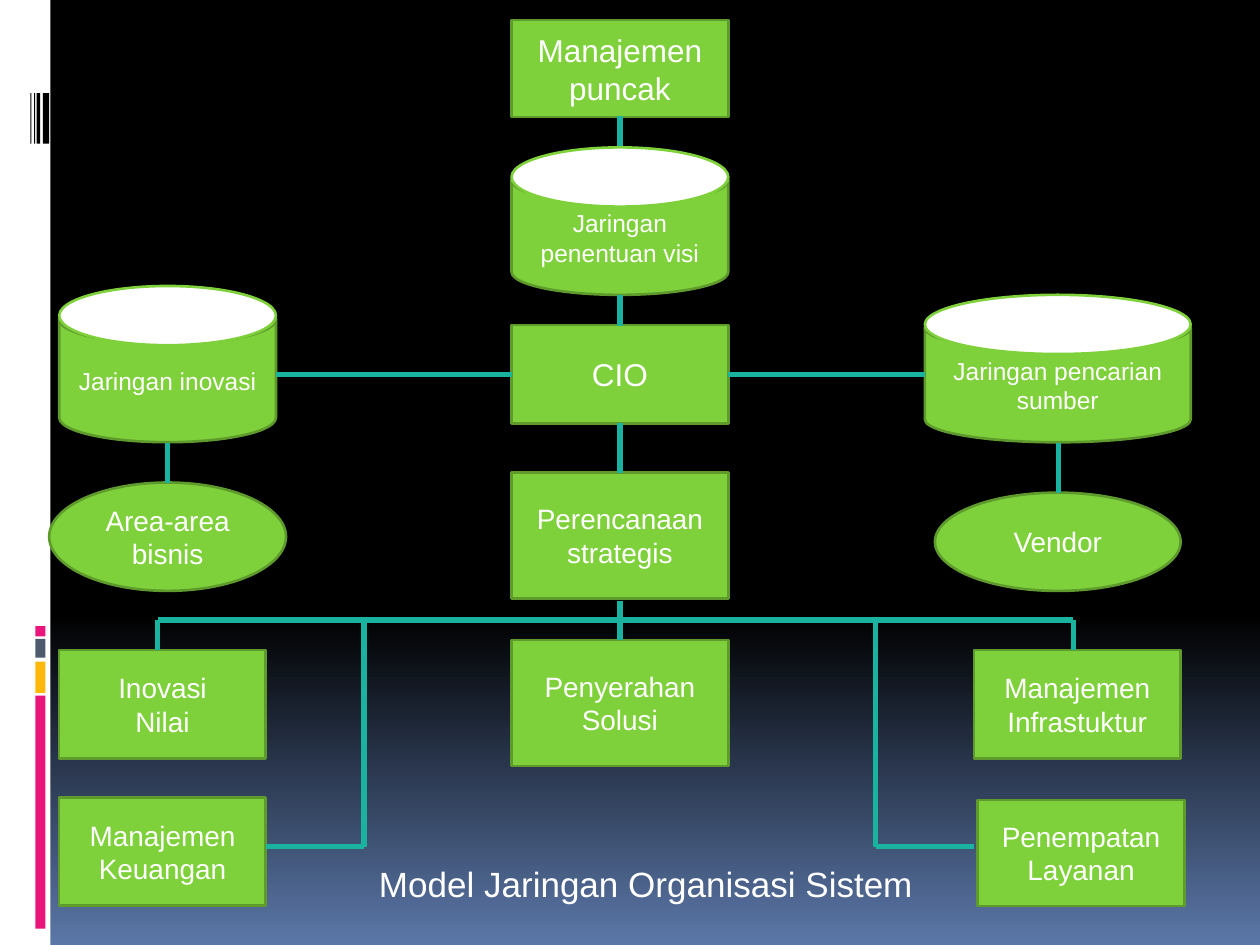
import pptx
import pptx.util
import pptx.dml.color
import pptx.enum.shapes
import pptx.enum.text
import pptx.oxml.ns
import lxml.etree

Inches, Pt = pptx.util.Inches, pptx.util.Pt
KIND = pptx.enum.shapes.MSO_SHAPE
RECT, OVAL, DISK = KIND.RECTANGLE, KIND.OVAL, KIND.FLOWCHART_MAGNETIC_DISK

THEME = {
    "font": "Arial", "text": "FFFFFF", "white": "FFFFFF", "black": "000000",
    "node": "7FD13B", "edge": "5E9B2C", "link": "1AB39F", "sky": "5B77A8",
    "pink": "EA157A", "amber": "FEB80A", "slate": "4E5B6F",
    "top": 18, "network": 14, "unit": 16, "title": 20,
    "edge_w": 1.5, "link_w": 3,
}

# Side decoration: left, top, width, height, colour
STRIPS = [
    (0, 0, 0.4, 7.5, "white"),
    (0.28, 5.52, 0.08, 1.85, "pink"),
    (0.28, 5.25, 0.08, 0.25, "amber"),
    (0.28, 5.07, 0.08, 0.15, "slate"),
    (0.28, 4.97, 0.08, 0.08, "pink"),
]
BARCODE = [(0.34, 0.05), (0.29, 0.03), (0.27, 0.01), (0.24, 0.01)]
BARCODE_TOP, BARCODE_H = 0.74, 0.4

# Chart columns and levels
MID, MID_W = 4.06, 1.72
LEFT, UNIT_W = 0.47, 1.64
AXIS = MID + MID_W / 2
CIO_Y, BUS_Y, LOW_Y = 2.97, 4.92, 6.72

# Nodes: kind, left, top, width, height, type size, paragraphs
NODES = [
    (RECT, MID, 0.16, MID_W, 0.77, "top", ["Manajemen puncak"]),
    (DISK, MID, 1.25, MID_W, 1.09, "network", ["Jaringan penentuan visi"]),
    (RECT, MID, 2.58, MID_W, 0.78, "top", ["CIO"]),
    (DISK, LEFT, 2.34, MID_W, 1.17, "network", ["Jaringan inovasi"]),
    (DISK, 7.34, 2.42, 2.11, 1.09, "network", ["Jaringan pencarian sumber"]),
    (RECT, MID, 3.75, MID_W, 1, "unit", ["Perencanaan strategis"]),
    (OVAL, 0.39, 3.83, 1.88, 0.86, "unit", ["Area-area bisnis"]),
    (OVAL, 7.42, 3.91, 1.95, 0.78, "unit", ["Vendor"]),
    (RECT, MID, 5.08, MID_W, 1, "unit", ["Penyerahan Solusi"]),
    (RECT, LEFT, 6.33, UNIT_W, 0.86, "unit", ["Manajemen Keuangan"]),
    (RECT, LEFT, 5.16, UNIT_W, 0.86, "unit", ["Inovasi", "Nilai"]),
    (RECT, 7.76, 6.35, UNIT_W, 0.84, "unit", ["Penempatan Layanan"]),
    (RECT, 7.73, 5.16, UNIT_W, 0.86, "unit", ["Manajemen Infrastuktur"]),
]

# Links: vertical (x, top, bottom) and horizontal (y, left, right)
VERTICAL = [
    (AXIS, 0.92, 1.25), (AXIS, 2.34, 2.59), (AXIS, 3.36, 3.75), (AXIS, 4.77, 5.08),
    (1.33, 3.52, 3.83), (8.4, 3.52, 3.91),
    (1.25, BUS_Y, 5.16), (8.52, BUS_Y, 5.16),
    (2.89, BUS_Y, LOW_Y), (6.95, BUS_Y, LOW_Y),
]
HORIZONTAL = [
    (CIO_Y, 2.19, MID), (CIO_Y, MID + MID_W, 7.34),
    (BUS_Y, 1.25, AXIS), (BUS_Y, AXIS, 8.52),
    (LOW_Y, 2.11, 2.89), (LOW_Y, 6.95, 7.73),
]

# Disk lids: left, top, width
LIDS = [(LEFT, 2.27, MID_W), (7.34, 2.34, 2.11), (MID, 1.17, MID_W)]
LID_H = 0.47

TITLE = "Model Jaringan Organisasi Sistem"
TITLE_BOX = (2.91, 6.8, 4.47, 0.44)


def rgb(name):
    return pptx.dml.color.RGBColor.from_string(THEME[name])


def add_shape(shapes, kind, box, fill, line=None):
    sp = shapes.add_shape(kind, *map(Inches, box))
    sp.shadow.inherit = False
    sp.fill.solid()
    sp.fill.fore_color.rgb = rgb(fill)
    if line:
        sp.line.color.rgb = rgb(line)
        sp.line.width = Pt(THEME["edge_w"])
    else:
        sp.line.fill.background()
    return sp


def add_text(tf, paragraphs, size, align):
    for i, text in enumerate(paragraphs):
        p = tf.paragraphs[0] if i == 0 else tf.add_paragraph()
        p.alignment = align
        r = p.add_run()
        r.text = text
        r.font.name = THEME["font"]
        r.font.size = Pt(THEME[size])
        r.font.color.rgb = rgb("text")


def add_link(shapes, x1, y1, x2, y2):
    cx = shapes.add_connector(pptx.enum.shapes.MSO_CONNECTOR.STRAIGHT,
                              *map(Inches, (x1, y1, x2, y2)))
    cx.line.color.rgb = rgb("link")
    cx.line.width = Pt(THEME["link_w"])
    lxml.etree.SubElement(cx._element.spPr, pptx.oxml.ns.qn("a:effectLst"))


def main():
    prs = pptx.Presentation()
    prs.slide_width, prs.slide_height = Inches(10), Inches(7.5)
    s = prs.slides.add_slide(prs.slide_layouts[6])
    shapes = s.shapes
    align = pptx.enum.text.PP_ALIGN

    # Background: black fading to blue at the bottom
    bg = s.background.fill
    bg.gradient()
    bg.gradient_angle = 270
    for stop, (pos, name) in zip(bg.gradient_stops, [(0.65, "black"), (1, "sky")]):
        stop.position = pos
        stop.color.rgb = rgb(name)

    # Side decoration
    for *box, colour in STRIPS:
        add_shape(shapes, RECT, box, colour)
    for x, w in BARCODE:
        add_shape(shapes, RECT, (x, BARCODE_TOP, w, BARCODE_H), "black")

    # Nodes
    for kind, x, y, w, h, size, paragraphs in NODES:
        sp = add_shape(shapes, kind, (x, y, w, h), "node", "edge")
        tf = sp.text_frame
        tf.word_wrap = True
        tf.vertical_anchor = pptx.enum.text.MSO_ANCHOR.MIDDLE
        add_text(tf, paragraphs, size, align.CENTER)

    # Links
    for x, top, bottom in VERTICAL:
        add_link(shapes, x, top, x, bottom)
    for y, left, right in HORIZONTAL:
        add_link(shapes, left, y, right, y)

    # Disk lids
    for x, y, w in LIDS:
        add_shape(shapes, OVAL, (x, y, w, LID_H), "white", "node")

    # Title
    tf = shapes.add_textbox(*map(Inches, TITLE_BOX)).text_frame
    tf.word_wrap = False
    tf.auto_size = pptx.enum.text.MSO_AUTO_SIZE.SHAPE_TO_FIT_TEXT
    add_text(tf, [TITLE], "title", align.LEFT)

    prs.save("out.pptx")


if __name__ == "__main__":
    main()
